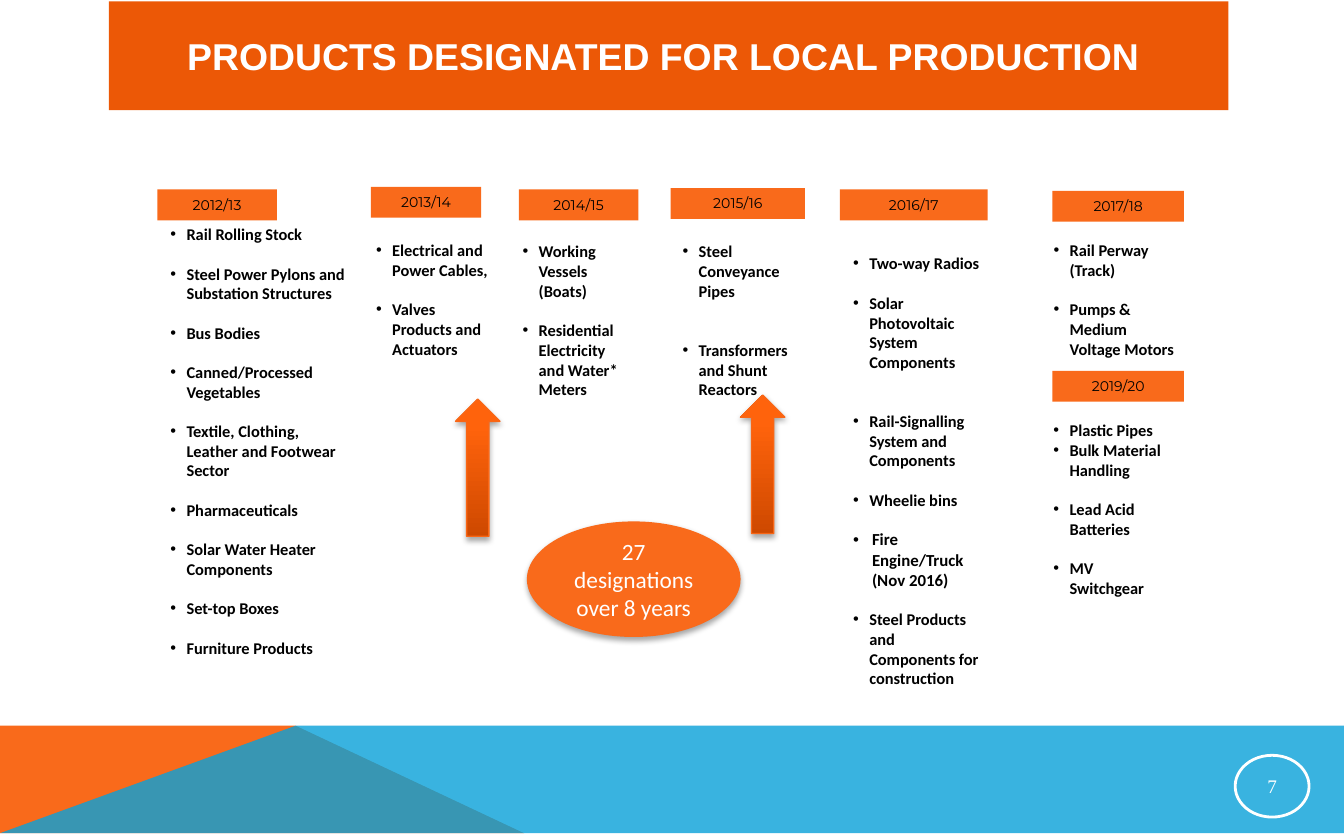
from dataclasses import dataclass

from lxml import etree
from pptx import Presentation, util as u
from pptx.dml.color import RGBColor
from pptx.enum import shapes as kinds, text as t
from pptx.oxml import ns, parse_xml

# Square grid: the slide is 100 columns wide and 62.5 rows high.
COLUMNS, ROWS = 100, 62.5
CELL = u.Inches(0.1)

ORANGE, DEEP_ORANGE, BLUE = "F96A1B", "EC5806", "08A1D9"
WHITE, BLACK = "FFFFFF", "000000"
BLANK_LINE = 10.55  # points
INSET = 0.5
TAG_HEIGHT = 2.3
FOOTER_TOP, PEAK = 54.3, 22.3
A = ns.nsdecls("a")


@dataclass(frozen=True)
class Box:
    left: float
    top: float
    width: float
    height: float

    def emu(self) -> list[int]:
        return [cells(v) for v in (self.left, self.top, self.width, self.height)]


@dataclass(frozen=True)
class Style:
    font: str
    size: float
    color: str
    bold: bool = False


@dataclass(frozen=True)
class Product:
    name: str
    blank_lines: int = 1
    size: float = 8.8
    indent: float = 1.2


@dataclass(frozen=True)
class Period:
    years: str
    tag: Box
    listing: Box
    products: list[Product]
    lead: float = 0  # extra room above the first product


TITLE = Style("Arial", 20, WHITE, True)
YEARS = Style("Montserrat", 7.5, BLACK)
TOTAL = Style("Calibri", 12.5, WHITE)
PAGE = Style("Times New Roman", 10.3, WHITE)

PERIODS = [
    Period("2012/13", Box(11.7, 14.1, 8.9, TAG_HEIGHT), Box(11.7, 16.2, 15.3, 33.4), [
        Product("Rail Rolling Stock", 0),
        Product("Steel Power Pylons and Substation Structures"),
        Product("Bus Bodies"),
        Product("Canned/Processed Vegetables"),
        Product("Textile, Clothing, Leather and Footwear Sector"),
        Product("Pharmaceuticals"),
        Product("Solar Water Heater Components"),
        Product("Set-top Boxes"),
        Product("Furniture Products")]),
    Period("2013/14", Box(27.6, 13.9, 8.2, TAG_HEIGHT), Box(27, 17.4, 10.3, 14.1), [
        Product("Electrical and Power Cables,", 0),
        Product("Valves Products and Actuators")]),
    Period("2014/15", Box(38.6, 14.1, 8.9, TAG_HEIGHT), Box(37.9, 16.2, 10.3, 16.6), [
        Product("Working Vessels (Boats)", 0),
        Product("Residential Electricity and Water* Meters")], 1.27),
    Period("2015/16", Box(49.9, 14, 10, TAG_HEIGHT), Box(49.8, 16.2, 11.1, 17), [
        Product("Steel Conveyance Pipes", 0),
        Product("Transformers and Shunt Reactors", 2)], 1.27),
    Period("2016/17", Box(62.5, 14.1, 11, TAG_HEIGHT), Box(62.5, 17.1, 11.6, 38.6), [
        Product("Two-way Radios", 0),
        Product("Solar Photovoltaic System Components"),
        Product("Rail-Signalling System and Components", 2),
        Product("Wheelie bins"),
        Product("Fire Engine/Truck (Nov 2016)", size=9, indent=1.4),
        Product("Steel Products and Components for construction")], 1.27),
    Period("2017/18", Box(78.3, 14.2, 9.8, TAG_HEIGHT), Box(77.4, 17.4, 11.1, 11.3), [
        Product("Rail Perway (Track)", 0),
        Product("Pumps & Medium Voltage Motors")]),
    Period("2019/20", Box(78.3, 27.6, 9.8, TAG_HEIGHT), Box(77.4, 30.8, 10.6, 15.7), [
        Product("Plastic Pipes", 0),
        Product("Bulk Material Handling", 0),
        Product("Lead Acid Batteries"),
        Product("MV Switchgear\t")]),
]
ARROWS = [Box(33.9, 29.7, 3.3, 10.2), Box(55.1, 29.4, 3.3, 10.3)]


def cells(count: float) -> int:
    return round(count * CELL)


def rgb(color: str) -> RGBColor:
    return RGBColor.from_string(color)


def add_run(paragraph, words: str, style: Style) -> None:
    run = paragraph.add_run()
    run.text = words
    run.font.name, run.font.size = style.font, u.Pt(style.size)
    run.font.bold, run.font.color.rgb = style.bold, rgb(style.color)


def add_block(slide, kind, box: Box, fill: str | None = None, words: str = "",
              style: Style | None = None, anchor=t.MSO_ANCHOR.MIDDLE):
    """Add a borderless preset shape with optional centred words."""
    block = slide.shapes.add_shape(kind, *box.emu())
    block.shadow.inherit = False
    block.line.fill.background()
    if fill:
        block.fill.solid()
        block.fill.fore_color.rgb = rgb(fill)
    else:
        block.fill.background()
    if style:
        frame = block.text_frame
        frame.word_wrap, frame.vertical_anchor = True, anchor
        frame.paragraphs[0].alignment = t.PP_ALIGN.CENTER
        add_run(frame.paragraphs[0], words, style)
    return block


def add_drop_shadow(shape) -> None:
    effects = shape._element.spPr.find(ns.qn("a:effectLst"))
    effects.append(parse_xml(
        f'<a:outerShdw {A} blurRad="{u.Pt(3.1)}" dist="{u.Pt(1.8)}" dir="5400000" '
        f'rotWithShape="0"><a:srgbClr val="{BLACK}"><a:alpha val="35000"/>'
        '</a:srgbClr></a:outerShdw>'))


def add_arrow(slide, box: Box) -> None:
    arrow = add_block(slide, kinds.MSO_SHAPE.UP_ARROW, box)
    arrow.fill.gradient()
    arrow.fill.gradient_angle = 90  # counter-clockwise: dark end at the bottom
    stops = arrow._element.spPr.find(".//" + ns.qn("a:gsLst"))
    for stop in list(stops):
        stops.remove(stop)
    for share, color in ((0, "CE4900"), (80, "FF630C"), (100, "FF640E")):
        stops.append(parse_xml(f'<a:gs {A} pos="{share * 1000}">'
                               f'<a:srgbClr val="{color}"/></a:gs>'))
    arrow.line.color.rgb, arrow.line.width = rgb("F96615"), u.Pt(0.75)
    add_drop_shadow(arrow)


def add_footer_part(slide, points: list[tuple[float, float]], color: str,
                    opacity: int = 100) -> None:
    builder = slide.shapes.build_freeform(*points[0], scale=CELL)
    builder.add_line_segments(points[1:], close=True)
    part = builder.convert_to_shape()
    part.shadow.inherit = False
    part.line.fill.background()
    part.fill.solid()
    part.fill.fore_color.rgb = rgb(color)
    if opacity < 100:
        tint = part._element.spPr.find(".//" + ns.qn("a:srgbClr"))
        etree.SubElement(tint, ns.qn("a:alpha")).set("val", str(opacity * 1000))


def add_period(slide, period: Period) -> None:
    add_block(slide, kinds.MSO_SHAPE.RECTANGLE, period.tag, ORANGE,
              period.years, YEARS, t.MSO_ANCHOR.TOP)
    frame = slide.shapes.add_textbox(*period.listing.emu()).text_frame
    frame.word_wrap = True
    frame.margin_top = cells(INSET + period.lead)
    for index, product in enumerate(period.products):
        line = frame.add_paragraph() if index else frame.paragraphs[0]
        line.space_before = u.Pt(product.blank_lines * BLANK_LINE)
        props = line._p.get_or_add_pPr()
        props.set("marL", str(cells(product.indent)))
        props.set("indent", str(-cells(product.indent)))
        props.append(parse_xml(f'<a:buFont {A} typeface="Arial"/>'))
        props.append(parse_xml(f'<a:buChar {A} char="•"/>'))
        add_run(line, product.name, Style("Calibri", product.size, BLACK, True))


def add_page_number(slide) -> None:
    badge = add_block(slide, kinds.MSO_SHAPE.OVAL, Box(91.9, 56.2, 5.5, 4.6),
                      None, "7", PAGE)
    badge.line.color.rgb, badge.line.width = rgb(WHITE), u.Pt(1.5)
    frame = badge.text_frame
    frame.margin_left = frame.margin_right = cells(0.1)
    frame.margin_top = frame.margin_bottom = cells(0.1)


def main() -> None:
    deck = Presentation()
    deck.slide_width, deck.slide_height = cells(COLUMNS), cells(ROWS)
    slide = deck.slides.add_slide(deck.slide_layouts[6])

    add_footer_part(slide, [(0, ROWS), (0, FOOTER_TOP), (PEAK, FOOTER_TOP),
                            (39.1, ROWS)], ORANGE)
    add_footer_part(slide, [(0, ROWS), (PEAK, FOOTER_TOP), (COLUMNS, FOOTER_TOP),
                            (COLUMNS, ROWS)], BLUE, 80)
    add_block(slide, kinds.MSO_SHAPE.RECTANGLE, Box(8.1, 0.1, 83.3, 8.1), DEEP_ORANGE,
              "PRODUCTS DESIGNATED FOR LOCAL PRODUCTION ", TITLE)
    for period in PERIODS:
        add_period(slide, period)
    total = add_block(slide, kinds.MSO_SHAPE.OVAL, Box(39.2, 38.8, 15.9, 8.6), ORANGE,
                      "27 designations over 8 years", TOTAL)
    add_drop_shadow(total)
    for box in ARROWS:
        add_arrow(slide, box)
    add_page_number(slide)
    deck.save("out.pptx")


if __name__ == "__main__":
    main()
